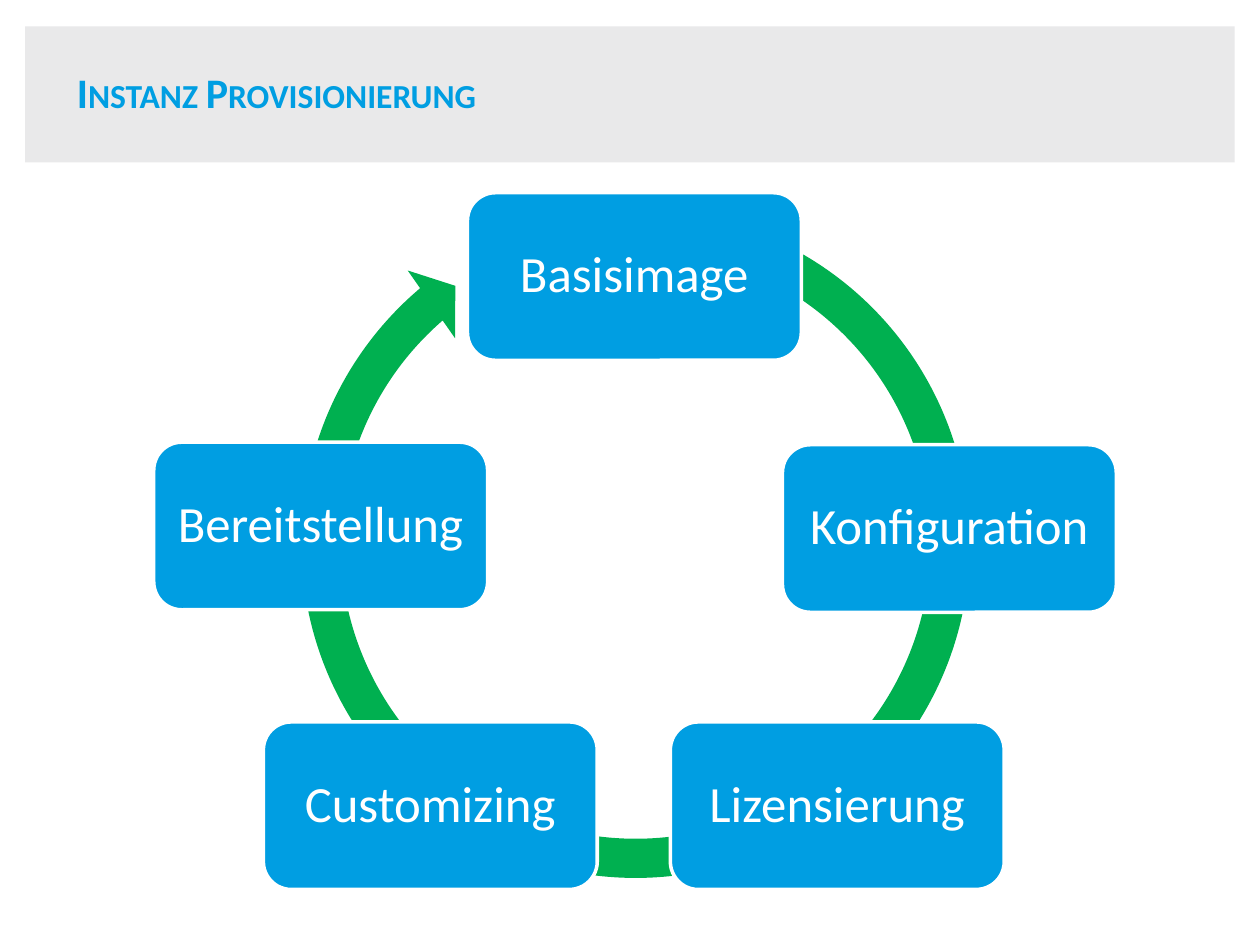
from dataclasses import dataclass

from pptx import Presentation
from pptx.dml.color import RGBColor
from pptx.enum import shapes, text
from pptx.util import Inches, Pt


@dataclass(frozen=True)
class Theme:
    font: str = "Calibri"
    blue: str = "009EE2"
    green: str = "00B050"
    grey: str = "E9E9EA"
    white: str = "FFFFFF"
    title_size: int = 24
    step_size: int = 29
    outline: int = 2


class SlideBuilder:
    def __init__(self, slide, theme):
        self.slide = slide
        self.theme = theme

    def apply(self, target, values):
        for name, value in values.items():
            setattr(target, name, value)

    def place(self, shape, left, top, width, height):
        self.apply(shape, {
            "left": Inches(left), "top": Inches(top),
            "width": Inches(width), "height": Inches(height),
        })

    def format_font(self, font, size, color, bold=False):
        self.apply(font, {"name": self.theme.font, "size": Pt(size), "bold": bold})
        font.color.rgb = RGBColor.from_string(color)

    def add_filled(self, kind, box, fill, outline=None):
        shape = self.slide.shapes.add_shape(kind, *map(Inches, box))
        shape.shadow.inherit = False
        shape.fill.solid()
        shape.fill.fore_color.rgb = RGBColor.from_string(fill)
        if outline:
            shape.line.color.rgb = RGBColor.from_string(outline)
            shape.line.width = Pt(self.theme.outline)
        else:
            shape.line.fill.background()
        return shape

    def add_banner(self, box):
        banner = self.add_filled(shapes.MSO_SHAPE.RECTANGLE, box, self.theme.grey)
        self.slide.shapes.element.insert(2, banner.element)

    def add_title(self, title_text, box):
        title = self.slide.shapes.title
        self.place(title, *box)
        title.text_frame.vertical_anchor = text.MSO_ANCHOR.MIDDLE
        paragraph = title.text_frame.paragraphs[0]
        paragraph.alignment = text.PP_ALIGN.LEFT
        run = paragraph.add_run()
        run.text = title_text
        self.format_font(run.font, self.theme.title_size, self.theme.blue, True)
        run._r.get_or_add_rPr().set("cap", "small")

    def add_cycle_arrow(self, box, adjustments):
        arrow = self.add_filled(shapes.MSO_SHAPE.CIRCULAR_ARROW, box, self.theme.green)
        for index, value in enumerate(adjustments):
            arrow.adjustments[index] = value

    def add_step(self, label, box):
        step = self.add_filled(
            shapes.MSO_SHAPE.ROUNDED_RECTANGLE, box, self.theme.blue, self.theme.white)
        frame = step.text_frame
        margins = ("margin_left", "margin_top", "margin_right", "margin_bottom")
        self.apply(frame, dict.fromkeys(margins, Inches(0.12)))
        self.apply(frame, {"word_wrap": True, "vertical_anchor": text.MSO_ANCHOR.MIDDLE})
        paragraph = frame.paragraphs[0]
        self.apply(paragraph, {"alignment": text.PP_ALIGN.CENTER, "line_spacing": 0.9})
        run = paragraph.add_run()
        run.text = label
        self.format_font(run.font, self.theme.step_size, self.theme.white)


def main():
    presentation = Presentation()
    presentation.slide_width = Inches(10)
    presentation.slide_height = Inches(7.5)
    slide = presentation.slides.add_slide(presentation.slide_layouts[5])
    builder = SlideBuilder(slide, Theme())

    builder.add_banner((0.2, 0.21, 9.6, 1.08))
    builder.add_title("Instanz Provisionierung", (0.51, 0.29, 6.85, 0.87))
    builder.add_cycle_arrow((2.22, 1.49, 5.65, 5.65), (0.055, 3.31, 137.71, 173.89, 0.058))

    step_size = (2.65, 1.33)
    steps = {
        "Basisimage": (3.71, 1.53),
        "Konfiguration": (6.21, 3.53),
        "Lizensierung": (5.32, 5.73),
        "Customizing": (2.09, 5.73),
        "Bereitstellung": (1.22, 3.51),
    }
    for label, position in steps.items():
        builder.add_step(label, position + step_size)

    presentation.save("out.pptx")


if __name__ == "__main__":
    main()
